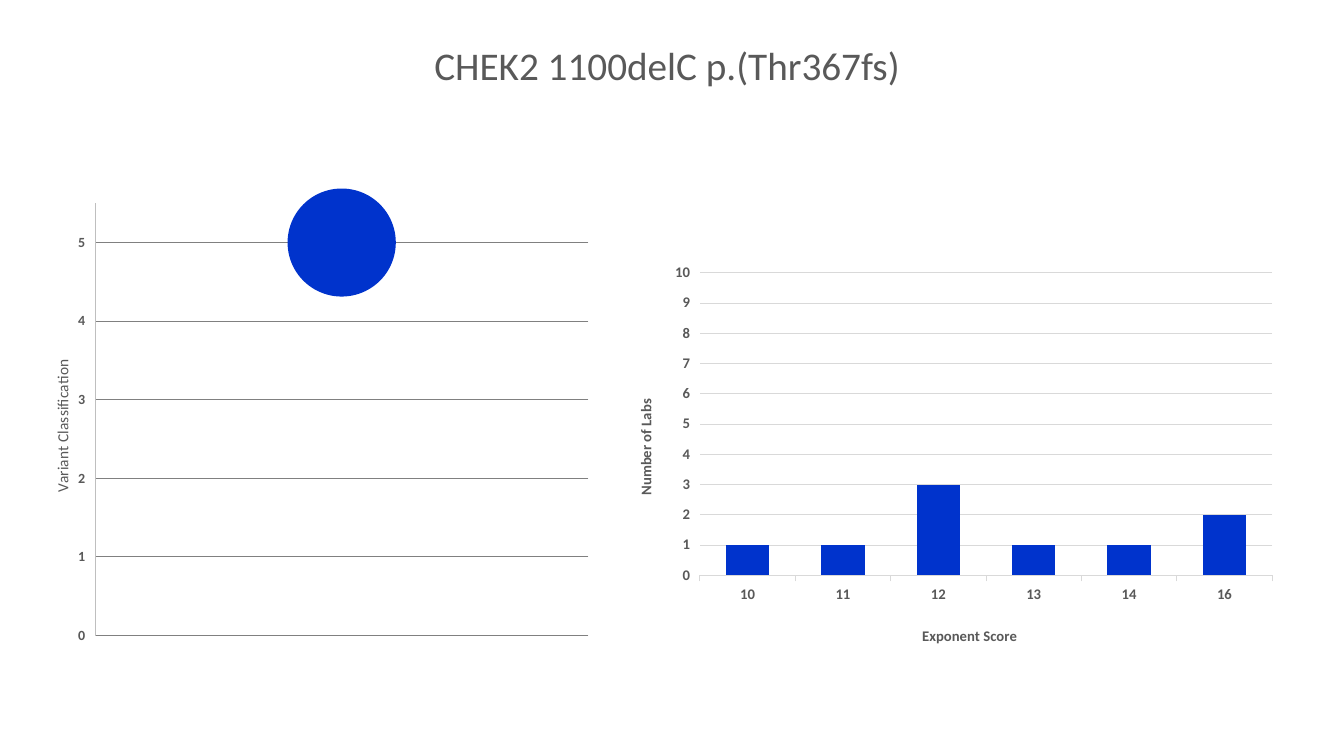
"""Build a slide with a variant classification bubble chart and a score histogram."""
from dataclasses import dataclass

from lxml import etree
from pptx import Presentation
from pptx.chart.axis import _BaseAxis
from pptx.chart.chart import Chart
from pptx.chart.data import BubbleChartData, CategoryChartData
from pptx.dml.color import RGBColor
from pptx.enum.chart import XL_CHART_TYPE, XL_TICK_LABEL_POSITION, XL_TICK_MARK
from pptx.enum.text import MSO_ANCHOR, MSO_AUTO_SIZE, PP_ALIGN
from pptx.oxml.ns import qn
from pptx.slide import Slide
from pptx.text.text import Font
from pptx.util import Emu, Pt

BUBBLE = XL_CHART_TYPE.BUBBLE
COLUMN = XL_CHART_TYPE.COLUMN_CLUSTERED
LABELS_LOW = XL_TICK_LABEL_POSITION.LOW
TICK_NONE = XL_TICK_MARK.NONE
TICK_OUTSIDE = XL_TICK_MARK.OUTSIDE
CENTER = PP_ALIGN.CENTER
TOP = MSO_ANCHOR.TOP
NO_AUTOFIT = MSO_AUTO_SIZE.NONE

EMU_PER_PX = 9144
FONT_NAME = "Calibri"
GRAY = "595959"
BLUE = "0033CC"
LIGHT_GRAY = "D9D9D9"


@dataclass(frozen=True)
class Box:
    left: int
    top: int
    width: int
    height: int


@dataclass(frozen=True)
class AxisStyle:
    title: str
    title_size: float
    title_bold: bool
    title_position: dict[str, float]
    label_size: float
    tick_mark: XL_TICK_MARK
    line_color: str | None
    grid_color: str | None


SLIDE_BOX = Box(0, 0, 1333, 750)
TITLE_BOX = Box(399, 36, 525, 57)
BUBBLE_BOX = Box(26, 187, 569, 462)
COLUMN_BOX = Box(615, 255, 660, 395)
BUBBLE_PLOT = {"x": 0.12, "y": 0.03, "w": 0.86, "h": 0.93}
COLUMN_PLOT = {"x": 0.12, "y": 0.04, "w": 0.86, "h": 0.76}

CLASSIFICATION_AXIS = AxisStyle(
    "Variant Classification", 11, False, {"x": 0.04, "y": 0.36},
    10, TICK_NONE, "BFBFBF", "808080")
SCORE_AXIS = AxisStyle(
    "Exponent Score", 10.5, True, {"x": 0.45, "y": 0.92},
    10.5, TICK_OUTSIDE, LIGHT_GRAY, None)
LABS_AXIS = AxisStyle(
    "Number of Labs", 10.5, True, {"x": 0.02, "y": 0.35},
    10.5, TICK_OUTSIDE, None, LIGHT_GRAY)

LABS_BY_SCORE = {"10": 1, "11": 1, "12": 3, "13": 1, "14": 1, "16": 2}
LABS_BY_CLASSIFICATION = {1: 0, 2: 0, 3: 0, 4: 0, 5: 9}


def px(length: int) -> Emu:
    return Emu(length * EMU_PER_PX)


def rgb(color: str) -> RGBColor:
    return RGBColor.from_string(color)


def style_font(font: Font, size: float, bold: bool = False) -> None:
    font.name = FONT_NAME
    font.size = Pt(size)
    font.bold = bold
    font.color.rgb = rgb(GRAY)


def make_layout(position: dict[str, float], inner: bool = False) -> etree._Element:
    layout = etree.Element(qn("c:layout"))
    manual = etree.SubElement(layout, qn("c:manualLayout"))
    if inner:
        etree.SubElement(manual, qn("c:layoutTarget")).set("val", "inner")
    for key in ("x", "y"):
        etree.SubElement(manual, qn(f"c:{key}Mode")).set("val", "edge")
    for key, value in position.items():
        etree.SubElement(manual, qn(f"c:{key}")).set("val", str(value))
    return layout


def remove_layout(element: etree._Element) -> None:
    for layout in element.findall(qn("c:layout")):
        element.remove(layout)


def style_axis(axis: _BaseAxis, style: AxisStyle) -> None:
    axis.has_title = True
    title = axis.axis_title
    title.text_frame.text = style.title
    style_font(title.text_frame.paragraphs[0].font, style.title_size, style.title_bold)
    title_element = title._element
    remove_layout(title_element)
    title_element.find(qn("c:tx")).addnext(make_layout(style.title_position))

    style_font(axis.tick_labels.font, style.label_size, True)
    axis.tick_label_position = LABELS_LOW
    axis.major_tick_mark = style.tick_mark
    axis.minor_tick_mark = TICK_NONE
    axis.has_major_gridlines = style.grid_color is not None
    lines = [(axis.format.line, style.line_color)]
    if style.grid_color:
        lines.append((axis.major_gridlines.format.line, style.grid_color))
    for line, color in lines:
        if color:
            line.color.rgb = rgb(color)
            line.width = Pt(0.75)
        else:
            line.fill.background()


def set_scale(axis: _BaseAxis, minimum: float, maximum: float, step: float) -> None:
    axis.minimum_scale = minimum
    axis.maximum_scale = maximum
    axis.major_unit = step


def add_chart(slide: Slide, kind: XL_CHART_TYPE, box: Box,
              data: BubbleChartData | CategoryChartData,
              plot_position: dict[str, float]) -> Chart:
    frame = slide.shapes.add_chart(
        kind, px(box.left), px(box.top), px(box.width), px(box.height), data)
    chart = frame.chart
    chart.has_title = False
    chart.has_legend = False
    style_font(chart.font, 10)
    fill = chart.plots[0].series[0].format.fill
    fill.solid()
    fill.fore_color.rgb = rgb(BLUE)
    plot_area = chart._chartSpace.chart.plotArea
    remove_layout(plot_area)
    plot_area.insert(0, make_layout(plot_position, inner=True))
    return chart


def add_title(slide: Slide) -> None:
    title = slide.shapes.title
    title.left, title.top = px(TITLE_BOX.left), px(TITLE_BOX.top)
    title.width, title.height = px(TITLE_BOX.width), px(TITLE_BOX.height)
    frame = title.text_frame
    frame.text = "CHEK2 1100delC p.(Thr367fs)"
    frame.auto_size = NO_AUTOFIT
    frame.vertical_anchor = TOP
    paragraph = frame.paragraphs[0]
    paragraph.alignment = CENTER
    style_font(paragraph.font, 28)


def add_classification_chart(slide: Slide) -> None:
    data = BubbleChartData()
    series = data.add_series("Series 1")
    for classification, labs in LABS_BY_CLASSIFICATION.items():
        series.add_data_point(1, classification, labs)
    chart = add_chart(slide, BUBBLE, BUBBLE_BOX, data, BUBBLE_PLOT)
    chart.category_axis.visible = False
    chart.category_axis.has_major_gridlines = False
    set_scale(chart.category_axis, 0.5, 1.5, 0.5)
    style_axis(chart.value_axis, CLASSIFICATION_AXIS)
    set_scale(chart.value_axis, 0, 5.5, 1)


def add_score_chart(slide: Slide) -> None:
    data = CategoryChartData()
    data.categories = list(LABS_BY_SCORE)
    data.add_series("Series 1", list(LABS_BY_SCORE.values()))
    chart = add_chart(slide, COLUMN, COLUMN_BOX, data, COLUMN_PLOT)
    plot = chart.plots[0]
    plot.vary_by_categories = False
    plot.gap_width = 119
    plot.overlap = -27
    style_axis(chart.category_axis, SCORE_AXIS)
    style_axis(chart.value_axis, LABS_AXIS)
    set_scale(chart.value_axis, 0, 10, 1)


def main() -> None:
    presentation = Presentation()
    presentation.slide_width = px(SLIDE_BOX.width)
    presentation.slide_height = px(SLIDE_BOX.height)
    slide = presentation.slides.add_slide(presentation.slide_layouts[5])
    add_title(slide)
    add_classification_chart(slide)
    add_score_chart(slide)
    presentation.save("out.pptx")


if __name__ == "__main__":
    main()
